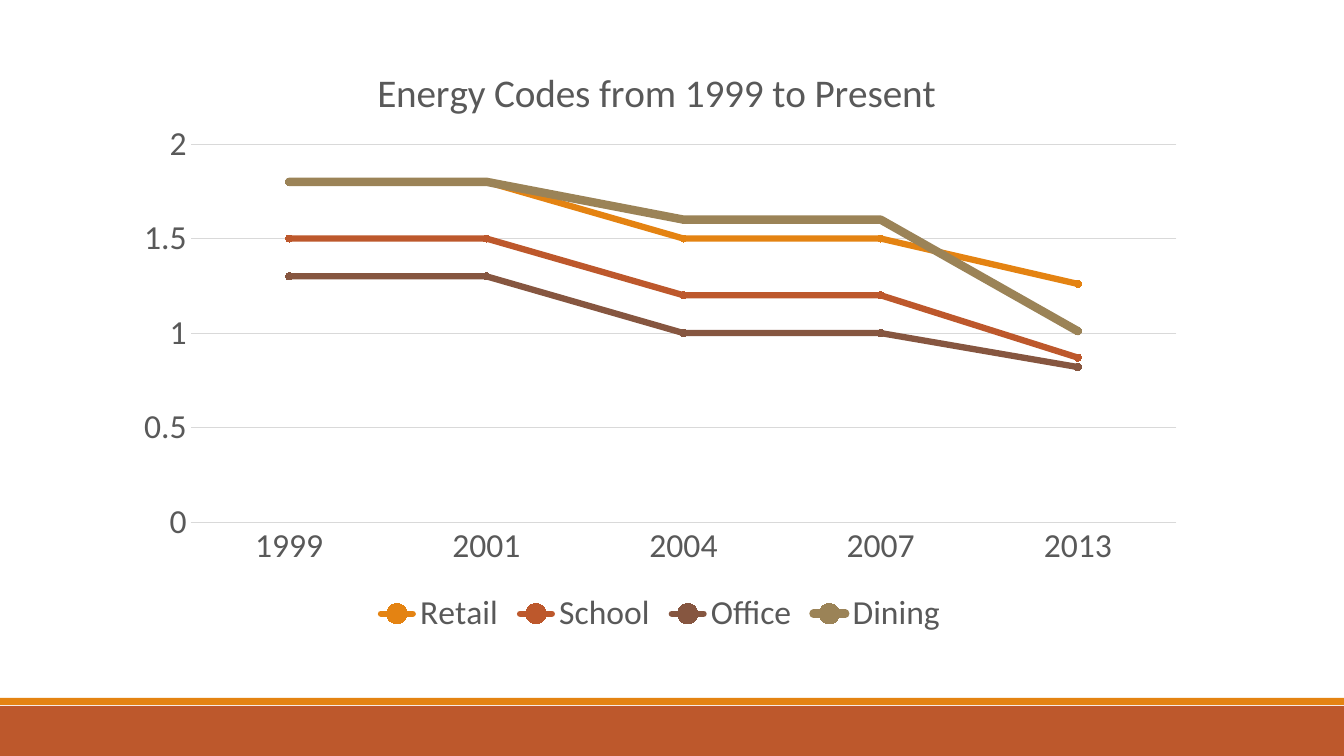
import pptx
import pptx.chart.data
import pptx.dml.color
import pptx.enum.chart
import pptx.enum.shapes
import pptx.oxml
import pptx.oxml.ns
import pptx.util

PX = 12192000 / 1344
COLORS = {
    "orange": "E48312",
    "rust": "BD582C",
    "brown": "865640",
    "khaki": "9B8357",
    "text": "595959",
    "grid": "D9D9D9",
}


def color(name):
    return pptx.dml.color.RGBColor.from_string(COLORS[name])


def place(parent, index, **fractions):
    for old_layout in parent.findall(pptx.oxml.ns.qn("c:layout")):
        parent.remove(old_layout)
    settings = "".join(f'<c:{key} val="{value}"/>' for key, value in fractions.items())
    layout = pptx.oxml.parse_xml(
        f'<c:layout {pptx.oxml.ns.nsdecls("c")}>'
        f"<c:manualLayout>{settings}</c:manualLayout></c:layout>"
    )
    parent.insert(index, layout)


presentation = pptx.Presentation()
presentation.slide_width = round(1344 * PX)
presentation.slide_height = round(756 * PX)
slide = presentation.slides.add_slide(presentation.slide_layouts[6])

for top, height, band_color in [(706, 50, "rust"), (698, 7, "orange")]:
    band = slide.shapes.add_shape(
        pptx.enum.shapes.MSO_SHAPE.RECTANGLE,
        0, round(top * PX), round(1344 * PX), round(height * PX),
    )
    band.shadow.inherit = False
    band.fill.solid()
    band.fill.fore_color.rgb = color(band_color)
    band.line.fill.background()

building_types = [
    ("Retail", [1.8, 1.8, 1.5, 1.5, 1.26], "orange", 4.5),
    ("School", [1.5, 1.5, 1.2, 1.2, 0.87], "rust", 4.5),
    ("Office", [1.3, 1.3, 1, 1, 0.82], "brown", 4.5),
    ("Dining", [1.8, 1.8, 1.6, 1.6, 1.01], "khaki", 6),
]
chart_data = pptx.chart.data.CategoryChartData()
chart_data.categories = ["1999", "2001", "2004", "2007", "2013"]
for name, values, line_color, width in building_types:
    chart_data.add_series(name, values)

chart = slide.shapes.add_chart(
    pptx.enum.chart.XL_CHART_TYPE.LINE_MARKERS,
    *[round(length * PX) for length in (123, 35, 1075, 606)],
    chart_data,
).chart
chart.plots[0].vary_by_categories = False

chart.has_title = True
chart.chart_title.include_in_layout = False
title_frame = chart.chart_title.text_frame
title_frame.text = "Energy Codes from 1999 to Present"
chart.has_legend = True
chart.legend.position = pptx.enum.chart.XL_LEGEND_POSITION.BOTTOM
chart.legend.include_in_layout = False

fonts = [
    (chart.font, 24),
    (title_frame.paragraphs[0].runs[0].font, 28),
    (chart.legend.font, 24),
    (chart.category_axis.tick_labels.font, 24),
    (chart.value_axis.tick_labels.font, 24),
]
for font, size in fonts:
    font.color.rgb = color("text")
    font_format = {"name": "Calibri", "size": pptx.util.Pt(size), "bold": False}
    for attribute, value in font_format.items():
        setattr(font, attribute, value)

no_tick = pptx.enum.chart.XL_TICK_MARK.NONE
axis_format = {"major_tick_mark": no_tick, "minor_tick_mark": no_tick}
scale_format = {
    "minimum_scale": 0,
    "maximum_scale": 2,
    "major_unit": 0.5,
    "has_major_gridlines": True,
}
for axis, settings in [
    (chart.category_axis, axis_format),
    (chart.value_axis, {**axis_format, **scale_format}),
]:
    for attribute, value in settings.items():
        setattr(axis, attribute, value)
chart.value_axis.format.line.fill.background()
for line in (chart.category_axis.format.line, chart.value_axis.major_gridlines.format.line):
    line.color.rgb = color("grid")
    line.width = pptx.util.Pt(0.75)

for series, (name, values, line_color, width) in zip(chart.plots[0].series, building_types):
    series.smooth = False
    series.format.line.color.rgb = color(line_color)
    series.format.line.width = pptx.util.Pt(width)
    series.format.line._get_or_add_ln().set("cap", "rnd")
    series.marker.style = pptx.enum.chart.XL_MARKER_STYLE.CIRCLE
    series.marker.size = 5
    series.marker.format.fill.solid()
    series.marker.format.fill.fore_color.rgb = color(line_color)
    series.marker.format.line.color.rgb = color(line_color)

place(chart.chart_title._element, 1, xMode="edge", yMode="edge", x=0.23, y=0.04)
plot_area = chart._chartSpace.xpath("c:chart/c:plotArea")[0]
place(plot_area, 0, layoutTarget="inner", xMode="edge", yMode="edge",
      x=0.063, y=0.18, w=0.917, h=0.624)

presentation.save("out.pptx")
